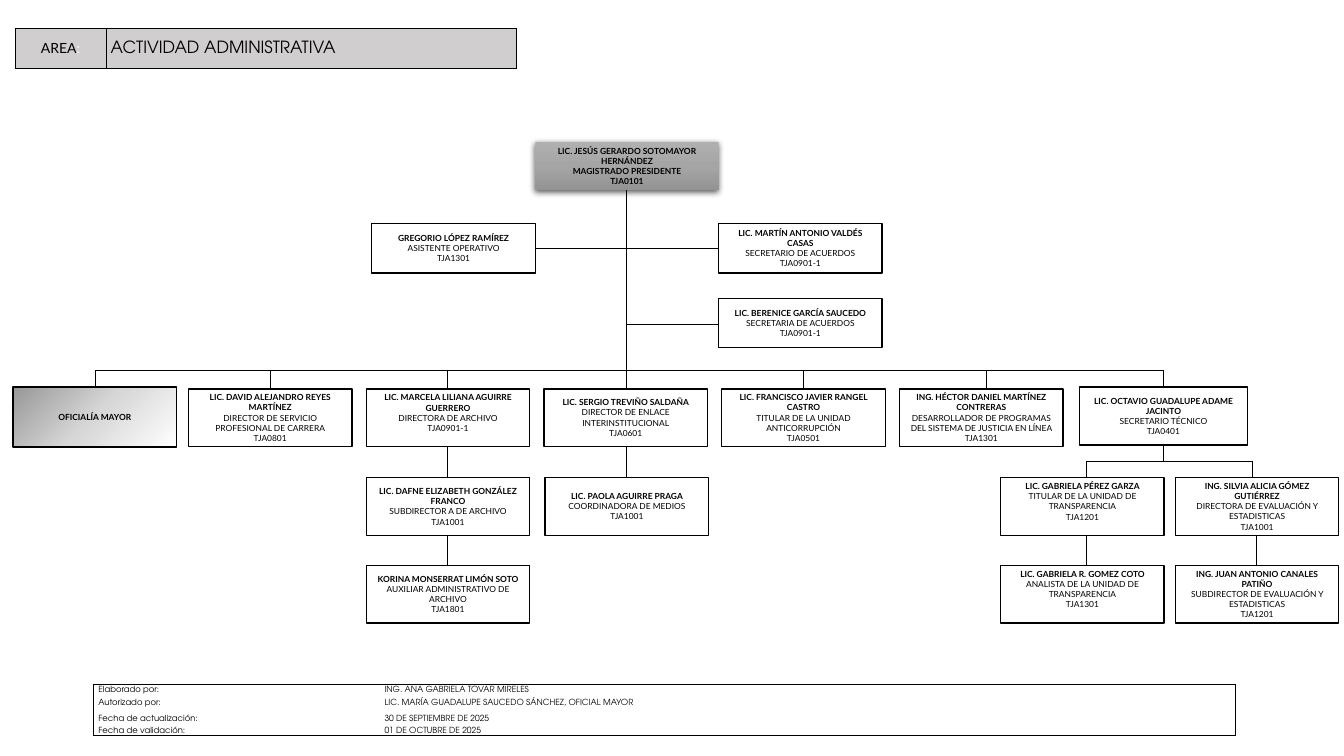
from dataclasses import dataclass

import pptx
import pptx.dml.color
import pptx.enum.shapes
import pptx.enum.text
import pptx.oxml
import pptx.oxml.ns
import pptx.util
from pptx.util import Cm


@dataclass(frozen=True)
class Theme:
    ink: str = "000000"
    paper: str = "FFFFFF"
    band: str = "D0CECE"
    chief: tuple = ("AFAFAF", "A5A5A5", "939393")
    office: tuple = ("979797", "D7D7D7", "FFFFFF")
    body: str = "Lato"
    head: str = "TeX Gyre Adventor"
    small: float = 6
    label: float = 10
    title: float = 12
    thin: float = 0.5
    edge: float = 1


THEME = Theme()
NS = pptx.oxml.ns.nsdecls("a")
WIDE, TALL, STAFF = 4.12, 1.45, 1.24
COLS = [round(4.75 + 4.48 * n, 2) for n in range(5)]
ROWS = [9.8, 12.04, 14.25]
BAR, FORK, TRUNK = 9.34, 11.62, 15.79
LIFT = 0.25

# left, top, width, height, extra bottom inset, lines
BOXES = [
    (27.2, 9.75, 4.24, 1.47, 0, ("LIC. OCTAVIO GUADALUPE ADAME JACINTO", "SECRETARIO TÉCNICO", "TJA0401")),
    (18.11, 5.64, WIDE, STAFF, 0, ("LIC. MARTÍN ANTONIO VALDÉS CASAS", "SECRETARIO DE ACUERDOS", "TJA0901-1")),
    (18.11, 7.52, WIDE, STAFF, 0, ("LIC. BERENICE GARCÍA SAUCEDO", "SECRETARIA DE ACUERDOS", "TJA0901-1")),
    (9.37, 5.64, WIDE, STAFF, 0, ("GREGORIO LÓPEZ RAMÍREZ", "ASISTENTE OPERATIVO", "TJA1301")),
    (COLS[0], ROWS[0], WIDE, TALL, 0,
     ("LIC. DAVID ALEJANDRO REYES MARTÍNEZ", "DIRECTOR DE SERVICIO PROFESIONAL DE CARRERA", "TJA0801")),
    (COLS[1], ROWS[0], WIDE, TALL, LIFT,
     ("LIC. MARCELA LILIANA AGUIRRE GUERRERO", "DIRECTORA DE ARCHIVO", "TJA0901-1")),
    (COLS[2], ROWS[0], WIDE, TALL, 0,
     ("LIC. SERGIO TREVIÑO SALDAÑA", "DIRECTOR DE ENLACE INTERINSTITUCIONAL", "TJA0601")),
    (COLS[3], ROWS[0], WIDE, TALL, 0,
     ("LIC. FRANCISCO JAVIER RANGEL CASTRO", "TITULAR DE LA UNIDAD ANTICORRUPCIÓN", "TJA0501")),
    (COLS[4], ROWS[0], WIDE, TALL, 0,
     ("ING. HÉCTOR DANIEL MARTÍNEZ CONTRERAS",
      "DESARROLLADOR DE PROGRAMAS DEL SISTEMA DE JUSTICIA EN LÍNEA TJA1301")),
    (COLS[1], ROWS[1], WIDE, TALL, 0,
     ("LIC. DAFNE ELIZABETH GONZÁLEZ FRANCO", "SUBDIRECTOR A DE ARCHIVO", "TJA1001")),
    (13.74, ROWS[1], WIDE, TALL, 0, ("LIC. PAOLA AGUIRRE PRAGA", "COORDINADORA DE MEDIOS", "TJA1001")),
    (25.22, ROWS[1], WIDE, TALL, LIFT,
     ("LIC. GABRIELA PÉREZ GARZA", "TITULAR DE LA UNIDAD DE TRANSPARENCIA", "TJA1201")),
    (29.62, ROWS[1], WIDE, TALL, 0,
     ("ING. SILVIA ALICIA GÓMEZ GUTIÉRREZ", "DIRECTORA DE EVALUACIÓN Y ESTADISTICAS", "TJA1001")),
    (COLS[1], ROWS[2], WIDE, TALL, 0,
     ("KORINA MONSERRAT LIMÓN SOTO", "AUXILIAR ADMINISTRATIVO DE ARCHIVO", "TJA1801")),
    (25.22, ROWS[2], WIDE, TALL, LIFT,
     ("LIC. GABRIELA R. GOMEZ COTO", "ANALISTA DE LA UNIDAD DE TRANSPARENCIA", "TJA1301")),
    (29.62, ROWS[2], WIDE, TALL, 0,
     ("ING. JUAN ANTONIO CANALES PATIÑO", "SUBDIRECTOR DE EVALUACIÓN Y ESTADISTICAS", "TJA1201")),
]

LINKS = [
    [(2.4, BAR), (29.33, BAR)],
    *[[(x, BAR), (x, ROWS[0])] for x in (2.4, 6.81, 11.28, 20.25, 24.85, 29.33)],
    [(TRUNK, 4.8), (TRUNK, ROWS[1])],
    [(13.49, 6.25), (18.11, 6.25)],
    [(TRUNK, 8.18), (18.11, 8.18)],
    [(11.28, 11.25), (11.28, ROWS[1])],
    [(29.33, 11.22), (29.33, FORK)],
    [(27.38, ROWS[1]), (27.38, FORK), (31.55, FORK), (31.55, ROWS[1])],
    *[[(x, 13.49), (x, ROWS[2])] for x in (11.28, 27.38, 31.67)],
]

SIGNED = [
    ("Elaborado por:", "ING. ANA GABRIELA TOVAR MIRELES"),
    ("Autorizado por:", "LIC. MARÍA GUADALUPE SAUCEDO SÁNCHEZ, OFICIAL MAYOR"),
    ("Fecha de actualización:", "30 DE SEPTIEMBRE DE 2025"),
    ("Fecha de validación:", "01 DE OCTUBRE DE 2025"),
]


def tint(code):
    return pptx.dml.color.RGBColor.from_string(code)


def style(font, face, size, bold=False, ink=THEME.ink):
    font.name, font.size, font.bold = face, pptx.util.Pt(size), bold
    font.color.rgb = tint(ink)


def link(slide, points):
    """Joins successive points with straight connectors."""
    for (x1, y1), (x2, y2) in zip(points, points[1:]):
        line = slide.shapes.add_connector(
            pptx.enum.shapes.MSO_CONNECTOR.STRAIGHT, Cm(x1), Cm(y1), Cm(x2), Cm(y2))
        line.line.color.rgb = tint(THEME.ink)
        line.line.width = pptx.util.Pt(THEME.thin)
        line.element.spPr.append(pptx.oxml.parse_xml(f"<a:effectLst {NS}/>"))


def box(slide, left, top, width, height, lift, lines, bold=1):
    """Adds a post; the first `bold` lines are bold."""
    shape = slide.shapes.add_shape(
        pptx.enum.shapes.MSO_SHAPE.RECTANGLE, Cm(left), Cm(top), Cm(width), Cm(height))
    shape.shadow.inherit = False
    shape.fill.solid()
    shape.fill.fore_color.rgb = tint(THEME.paper)
    shape.line.color.rgb = tint(THEME.ink)
    shape.line.width = pptx.util.Pt(THEME.edge)
    frame = shape.text_frame
    frame.word_wrap = True
    frame.vertical_anchor = pptx.enum.text.MSO_ANCHOR.MIDDLE
    frame.margin_left = frame.margin_right = Cm(0.18)
    frame.margin_top, frame.margin_bottom = Cm(0.1), Cm(0.1 + lift)
    frame.text = "\n".join(lines)
    for n, para in enumerate(frame.paragraphs):
        para.alignment = pptx.enum.text.PP_ALIGN.CENTER
        style(para.font, THEME.body, THEME.small, n < bold)
    return shape


def shade(shape, codes, angle):
    """Replaces the fill with a linear gradient of evenly spaced colours."""
    shape.fill.background()
    props = shape.element.spPr
    step = 100000 // (len(codes) - 1)
    stops = "".join(f'<a:gs pos="{n * step}"><a:srgbClr val="{code}"/></a:gs>'
                    for n, code in enumerate(codes))
    props.replace(props.find(pptx.oxml.ns.qn("a:noFill")), pptx.oxml.parse_xml(
        f'<a:gradFill {NS} rotWithShape="1"><a:gsLst>{stops}</a:gsLst>'
        f'<a:lin ang="{angle * 60000}" scaled="0"/></a:gradFill>'))


def cast(shape):
    """Gives the shape a soft shadow below it."""
    shape.element.spPr.find(pptx.oxml.ns.qn("a:effectLst")).append(pptx.oxml.parse_xml(
        f'<a:outerShdw {NS} blurRad="57150" dist="19050" dir="5400000" algn="ctr" rotWithShape="0">'
        f'<a:srgbClr val="{THEME.ink}"><a:alpha val="63000"/></a:srgbClr></a:outerShdw>'))


def rule(cell, sides):
    """Draws borders on the named sides and clears the others."""
    props = cell._tc.get_or_add_tcPr()
    for side in "LRTB":
        paint = f'<a:solidFill><a:srgbClr val="{THEME.ink}"/></a:solidFill>' if side in sides else "<a:noFill/>"
        props.append(pptx.oxml.parse_xml(
            f'<a:ln{side} {NS} w="{pptx.util.Pt(THEME.thin)}">{paint}</a:ln{side}>'))


def grid(slide, left, top, widths, heights):
    table = slide.shapes.add_table(
        len(heights), len(widths), Cm(left), Cm(top), Cm(sum(widths)), Cm(sum(heights))).table
    table.first_row = table.horz_banding = False
    for col, width in zip(table.columns, widths):
        col.width = Cm(width)
    for row, height in zip(table.rows, heights):
        row.height = Cm(height)
    return table


def fill(cell, text, sides, face, size, back=None):
    cell.margin_left = cell.margin_right = Cm(0.12)
    cell.margin_top = cell.margin_bottom = 0
    cell.vertical_anchor = pptx.enum.text.MSO_ANCHOR.MIDDLE
    rule(cell, sides)
    if back:
        cell.fill.solid()
        cell.fill.fore_color.rgb = tint(back)
    else:
        cell.fill.background()
    cell.text = text
    para = cell.text_frame.paragraphs[0]
    style(para.font, face, size)
    return para


def main():
    deck = pptx.Presentation()
    deck.slide_width, deck.slide_height = Cm(33.87), Cm(19.05)
    slide = deck.slides.add_slide(deck.slide_layouts[6])

    area = grid(slide, 0.38, 0.71, [2.29, 10.34], [1.02])
    para = fill(area.cell(0, 0), "AREA", "LRTB", THEME.body, THEME.label, THEME.band)
    para.alignment = pptx.enum.text.PP_ALIGN.CENTER
    colon = para.add_run()
    colon.text = ":"
    style(colon.font, THEME.body, THEME.label, ink=THEME.paper)
    fill(area.cell(0, 1), "ACTIVIDAD ADMINISTRATIVA", "LRTB", THEME.head, THEME.title, THEME.band)

    for points in LINKS:
        link(slide, points)
    chief = box(slide, 13.49, 3.58, 4.62, 1.22, 0,
                ("LIC. JESÚS GERARDO SOTOMAYOR HERNÁNDEZ", "MAGISTRADO PRESIDENTE", "TJA0101"), bold=3)
    chief.line.fill.background()
    shade(chief, THEME.chief, 90)
    cast(chief)
    office = box(slide, 0.33, 9.75, WIDE, 1.52, 0, ("OFICIALÍA MAYOR",))
    shade(office, THEME.office, 45)
    for post in BOXES:
        box(slide, *post)

    signed = grid(slide, 2.36, 17.25, [7.21, 21.56], [0.3, 0.36, 0.41, 0.2])
    for r, pair in enumerate(SIGNED):
        ends = {0: "T", len(SIGNED) - 1: "B"}.get(r, "")
        for c, text in enumerate(pair):
            fill(signed.cell(r, c), text, "LR"[c] + ends, THEME.head, THEME.small)

    deck.save("out.pptx")


if __name__ == "__main__":
    main()
